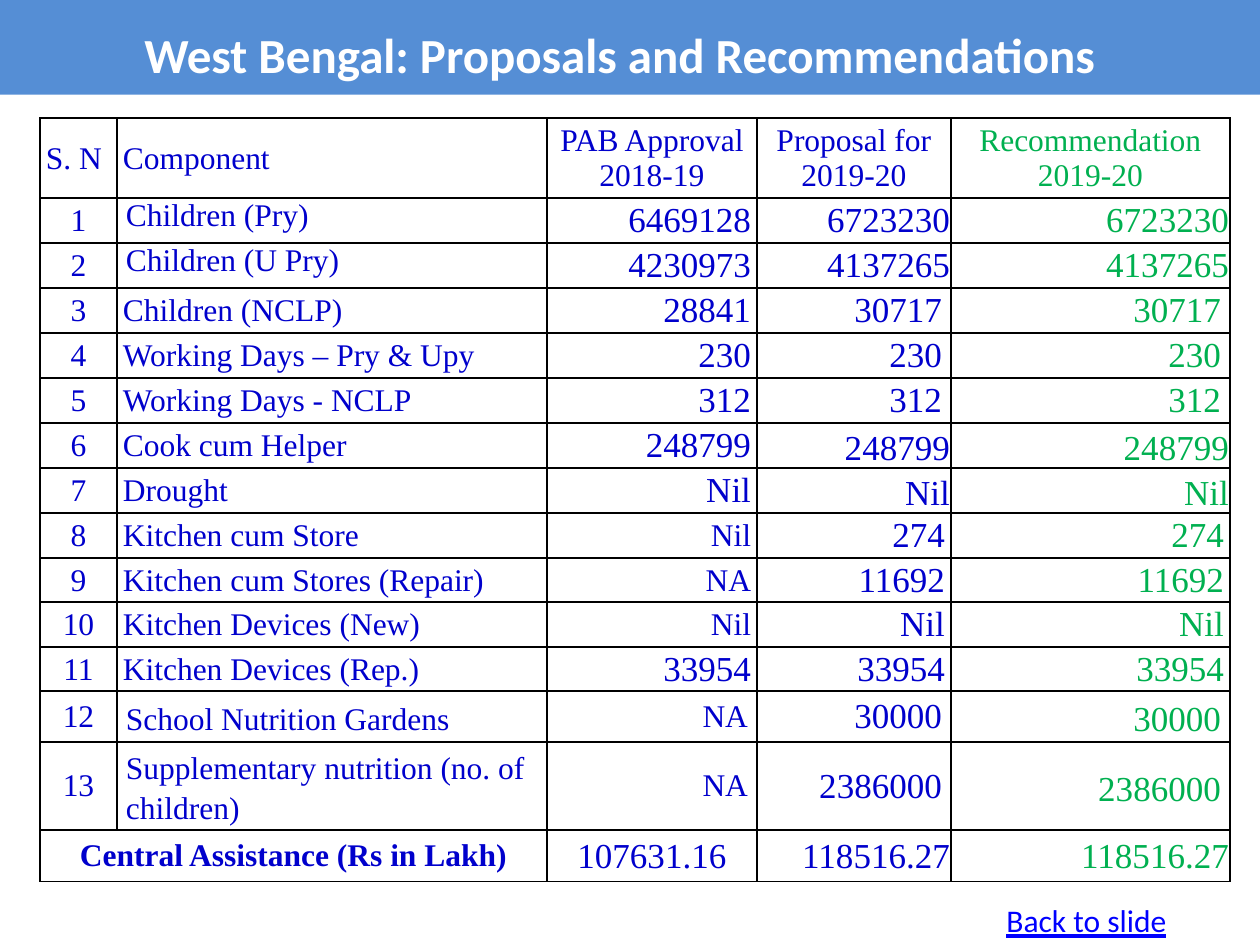
from lxml.etree import SubElement
from pptx import Presentation
from pptx.dml.color import RGBColor
from pptx.enum.text import MSO_ANCHOR, MSO_AUTO_SIZE, PP_ALIGN
from pptx.oxml.ns import qn
from pptx.util import Emu, Pt

HUES = {"band": "558ED5", "white": "FFFFFF", "ink": "0000CC",
        "green": "00B050", "link": "0000FF", "line": "000000"}
SIDES = {"l": PP_ALIGN.LEFT, "c": PP_ALIGN.CENTER, "r": PP_ALIGN.RIGHT}
SPOTS = {"t": MSO_ANCHOR.TOP, "m": MSO_ANCHOR.MIDDLE, "b": MSO_ANCHOR.BOTTOM}
SERIF, SANS = "Times New Roman", "Calibri"

COLS = [77, 430, 210, 194, 279]
ROWS = [80] + [45] * 8 + [44, 45, 44, 51, 88, 52]
HEADS = [("S. N", "l", "ink"), ("Component", "l", "ink"),
         ("PAB Approval 2018-19", "c", "ink"),
         ("Proposal for\n2019-20", "c", "ink"),
         ("Recommendation\n2019-20", "c", "green")]

TIGHT, WIDE, LOW, EVEN, TALL = "tight", "wide", "low", "even", "tall"
KINDS = {
    TIGHT: ({"pad": 9, "top": 0, "spot": "t"}, {}, {"pad": 1}, {}),
    WIDE: ({}, {}, {"pad": 9}, {}),
    LOW: ({}, {}, {"pad": 1, "spot": "b"}, {}),
    EVEN: ({}, {}, {}, {}),
    TALL: ({"pad": 9, "gap": 1.15}, {"pad": 9}, {"pad": 9}, {"gap": 1.15}),
}
ITEMS = [
    ("Children (Pry)", "6469128", 20, "6723230", TIGHT),
    ("Children (U Pry)", "4230973", 20, "4137265", TIGHT),
    ("Children (NCLP)", "28841", 20, "30717", WIDE),
    ("Working Days – Pry & Upy", "230", 20, "230", WIDE),
    ("Working Days - NCLP", "312", 20, "312", WIDE),
    ("Cook cum Helper", "248799", 20, "248799", LOW),
    ("Drought", "Nil", 20, "Nil", LOW),
    ("Kitchen cum Store", "Nil", 18, "274", EVEN),
    ("Kitchen cum Stores (Repair)", "NA", 18, "11692", EVEN),
    ("Kitchen Devices (New)", "Nil", 18, "Nil", EVEN),
    ("Kitchen Devices (Rep.)", "33954", 20, "33954", EVEN),
    ("School Nutrition Gardens", "NA", 18, "30000", TALL),
    ("Supplementary nutrition (no. of children)", "NA", 18, "2386000", TALL),
]


def px(n):
    return Emu(round(n * 914400 / 126))


def tint(name):
    return RGBColor.from_string(HUES[name])


def write(frame, text, font=SERIF, size=18, hue="ink", side="l",
          bold=False, under=False, gap=None):
    for i, line in enumerate(text.split("\n")):
        para = frame.add_paragraph() if i else frame.paragraphs[0]
        para.alignment = SIDES[side]
        if gap:
            para.line_spacing = gap
        run = para.add_run()
        run.text = line
        face = run.font
        face.name, face.size = font, Pt(size)
        face.bold, face.underline = bold, under
        face.color.rgb = tint(hue)


class Deck:
    """Holds the style and the current slide, and adds its elements."""

    def __init__(self):
        self.prs = Presentation()
        self.prs.slide_width, self.prs.slide_height = px(1260), px(945)
        self.slide = self.prs.slides.add_slide(self.prs.slide_layouts[5])

    def title(self, text, box, **style):
        shape = self.slide.shapes.title
        shape.left, shape.top, shape.width, shape.height = map(px, box)
        shape.fill.solid()
        shape.fill.fore_color.rgb = tint("band")
        frame = shape.text_frame
        frame.auto_size = MSO_AUTO_SIZE.SHAPE_TO_FIT_TEXT
        frame.vertical_anchor = SPOTS["m"]
        frame.margin_left, frame.margin_right = px(12), px(33)
        write(frame, text, **style)

    def label(self, text, box, **style):
        frame = self.slide.shapes.add_textbox(*map(px, box)).text_frame
        frame.word_wrap = True
        frame.auto_size = MSO_AUTO_SIZE.SHAPE_TO_FIT_TEXT
        write(frame, text, **style)

    def table(self, left, top):
        box = (left, top, sum(COLS), sum(ROWS))
        shape = self.slide.shapes.add_table(len(ROWS), len(COLS), *map(px, box))
        grid = shape.table
        grid.first_row = grid.horz_banding = False
        for col, wide in zip(grid.columns, COLS):
            col.width = px(wide)
        for row, high in zip(grid.rows, ROWS):
            row.height = px(high)
            for cell in row.cells:
                self.frame(cell)
        return grid

    def frame(self, cell):
        props = cell._tc.get_or_add_tcPr()
        for edge in ("a:lnL", "a:lnR", "a:lnT", "a:lnB"):
            line = SubElement(props, qn(edge), w=str(Pt(1)))
            fill = SubElement(line, qn("a:solidFill"))
            SubElement(fill, qn("a:srgbClr"), val=HUES["line"])
        cell.fill.solid()
        cell.fill.fore_color.rgb = tint("white")

    def cell(self, cell, text, pad=6, top=1, spot="m", **style):
        cell.margin_left = cell.margin_right = px(pad)
        cell.margin_top, cell.margin_bottom = px(top), 0
        cell.vertical_anchor = SPOTS[spot]
        write(cell.text_frame, text, **style)

    def save(self):
        self.prs.save("out.pptx")


def main():
    deck = Deck()
    deck.title("West Bengal: Proposals and Recommendations", (0, -6, 1260, 96),
               font=SANS, size=28, hue="white", side="c", bold=True, gap=1.4)
    grid = deck.table(40, 118)
    for col, (text, side, hue) in enumerate(HEADS):
        deck.cell(grid.cell(0, col), text, side=side, hue=hue)
    for row, (name, past, size, plan, kind) in enumerate(ITEMS, 1):
        first, prior, value, last = KINDS[kind]
        deck.cell(grid.cell(row, 0), str(row), side="c")
        deck.cell(grid.cell(row, 1), name, **first)
        deck.cell(grid.cell(row, 2), past, size=size, side="r", **prior)
        deck.cell(grid.cell(row, 3), plan, size=20, side="r", **value)
        deck.cell(grid.cell(row, 4), plan, size=20, side="r", hue="green",
                  **value, **last)
    end = len(ROWS) - 1
    grid.cell(end, 0).merge(grid.cell(end, 1))
    deck.cell(grid.cell(end, 0), "Central Assistance (Rs in Lakh)",
              side="c", bold=True)
    sums = [("107631.16", "c", "ink"), ("118516.27", "r", "ink"),
            ("118516.27", "r", "green")]
    for col, (text, side, hue) in enumerate(sums, 2):
        deck.cell(grid.cell(end, col), text, pad=1, size=20, side=side, hue=hue)
    deck.label("Back to slide", (994, 895, 297, 50),
               font=SANS, hue="link", under=True)
    deck.save()


if __name__ == "__main__":
    main()
